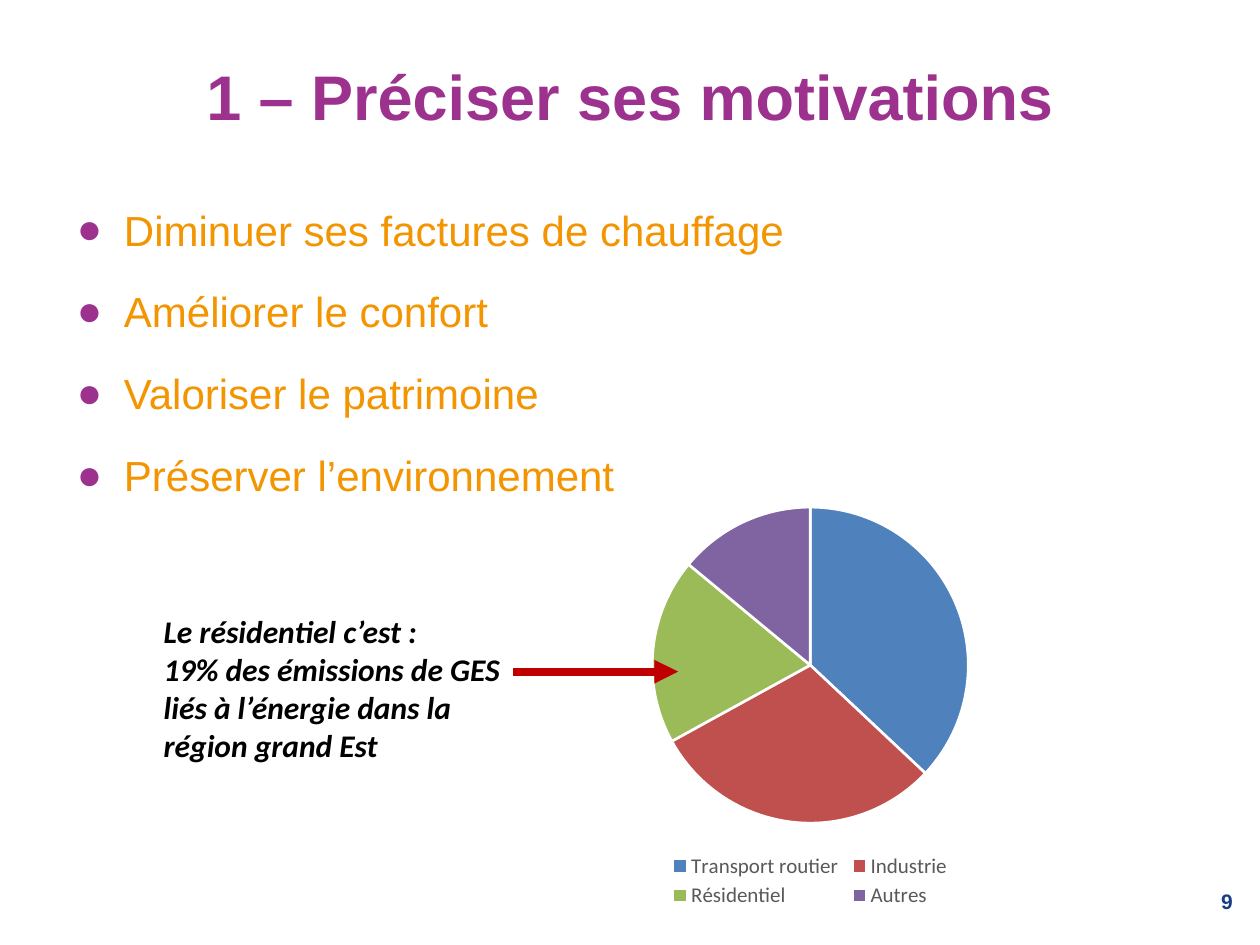
from lxml.etree import SubElement as Sub
from pptx import Presentation
from pptx.chart.data import CategoryChartData as Data
from pptx.dml.color import RGBColor as Rgb
from pptx.enum.chart import XL_CHART_TYPE as Kind, XL_LEGEND_POSITION as Pos
from pptx.enum.shapes import MSO_CONNECTOR as Conn
from pptx.enum.text import MSO_ANCHOR as Anchor, PP_ALIGN as Align
from pptx.oxml.ns import qn
from pptx.util import Cm, Pt

HUES = {
    "title": "9D328E", "list": "F39500", "page": "183C85", "note": "000000",
    "arrow": "C00000", "key": "595959", "gap": "FFFFFF",
}
SHARES = [
    ("Transport routier", 37, "4F81BD"),
    ("Industrie", 30, "C0504D"),
    ("Résidentiel", 19, "9BBB59"),
    ("Autres", 14, "8064A2"),
]
GOALS = [
    "Diminuer ses factures de chauffage",
    "Améliorer le confort",
    "Valoriser le patrimoine",
    "Préserver l’environnement",
]
NOTE = [
    "Le résidentiel c’est :",
    "19% des émissions de GES liés à l’énergie dans la région grand Est",
]


def rgb(name):
    return Rgb.from_string(HUES[name])


def place(shape, box):
    shape.left, shape.top, shape.width, shape.height = map(Cm, box)


def write(shape, lines, size, hue, face="Arial", bold=False, italic=False,
          align=Align.LEFT, anchor=Anchor.TOP, left=0, dot=None, gap=0):
    frame = shape.text_frame
    frame.word_wrap = True
    frame.vertical_anchor = anchor
    frame.text = "\n".join(lines)
    for i, para in enumerate(frame.paragraphs):
        para.alignment = align
        para.space_before = Pt(gap if i else 0)
        props = para._p.get_or_add_pPr()
        props.set("marL", str(Cm(left)))
        if dot:
            props.set("indent", str(-Cm(left)))
            tint = Sub(props, qn("a:buClr"))
            Sub(tint, qn("a:srgbClr"), val=HUES[dot])
            Sub(props, qn("a:buFont"), typeface="Arial")
            Sub(props, qn("a:buChar"), char="●")
        for run in para.runs:
            font = run.font
            font.name, font.size = face, Pt(size)
            font.bold, font.italic = bold, italic
            font.color.rgb = rgb(hue)


def add_text(slide, box, lines, **style):
    shape = slide.shapes.add_textbox(*map(Cm, box))
    write(shape, lines, **style)


def set_area(part, box, inner=False):
    """Fix the place of a chart part, in fractions of the chart."""
    old = part.find(qn("c:layout"))
    if old is not None:
        part.remove(old)
    area = part.makeelement(qn("c:layout"))
    manual = Sub(area, qn("c:manualLayout"))
    if inner:
        Sub(manual, qn("c:layoutTarget"), val="inner")
    for tag in ("xMode", "yMode"):
        Sub(manual, qn("c:" + tag), val="edge")
    for tag, val in zip("xywh", box):
        Sub(manual, qn("c:" + tag), val=str(val))
    part.insert(0 if inner else 1, area)


def add_pie(slide, box):
    data = Data()
    data.categories = [name for name, _, _ in SHARES]
    data.add_series("Series 1", [val for _, val, _ in SHARES])
    chart = slide.shapes.add_chart(Kind.PIE, *map(Cm, box), data).chart
    chart.has_title = False
    chart.font.name, chart.font.size = "Calibri", Pt(10)
    plot = chart.plots[0]
    plot.vary_by_categories = True
    for i, (_, _, hue) in enumerate(SHARES):
        form = plot.series[0].points[i].format
        form.fill.solid()
        form.fill.fore_color.rgb = Rgb.from_string(hue)
        form.line.color.rgb = rgb("gap")
        form.line.width = Pt(1.5)

    # Legend in two rows below the pie
    chart.has_legend = True
    key = chart.legend
    key.position, key.include_in_layout = Pos.BOTTOM, False
    key.font.name, key.font.size = "Calibri", Pt(12)
    key.font.color.rgb = rgb("key")
    set_area(key._element, (0.29, 0.84, 0.42, 0.15))
    set_area(chart._chartSpace.chart.plotArea, (0.27, 0.04, 0.46, 0.74), True)


def add_arrow(slide, start, end):
    line = slide.shapes.add_connector(Conn.STRAIGHT, *map(Cm, start + end))
    line.line.color.rgb = rgb("arrow")
    line.line.width = Pt(4.5)
    Sub(line.line._get_or_add_ln(), qn("a:tailEnd"), type="triangle")
    Sub(line._element.spPr, qn("a:effectLst"))


def main():
    deck = Presentation()
    deck.slide_width, deck.slide_height = Cm(25.4), Cm(19.05)
    slide = deck.slides.add_slide(deck.slide_layouts[5])

    # Page number and title
    add_text(slide, (19.18, 17.65, 5.92, 1.02), ["9"], size=12, hue="page",
             bold=True, align=Align.RIGHT, anchor=Anchor.MIDDLE)
    title = slide.shapes.title
    place(title, (1.27, 0.33, 22.86, 3.18))
    write(title, ["1 – Préciser ses motivations"], size=36, hue="title",
          bold=True, align=Align.CENTER, anchor=Anchor.MIDDLE)

    # Motivations and side note
    add_text(slide, (1.3, 3.99, 22.86, 11.71), GOALS, size=24, hue="list",
             left=0.95, dot="title", gap=18)
    add_text(slide, (1.78, 12.22, 8.84, 3.33), NOTE, size=18, hue="note",
             face="Calibri", bold=True, italic=True, left=1.27)

    # Emissions by sector
    add_pie(slide, (9.4, 9.88, 13.87, 8.61))
    add_arrow(slide, (10.34, 13.54), (13.67, 13.54))

    deck.save("out.pptx")


if __name__ == "__main__":
    main()
